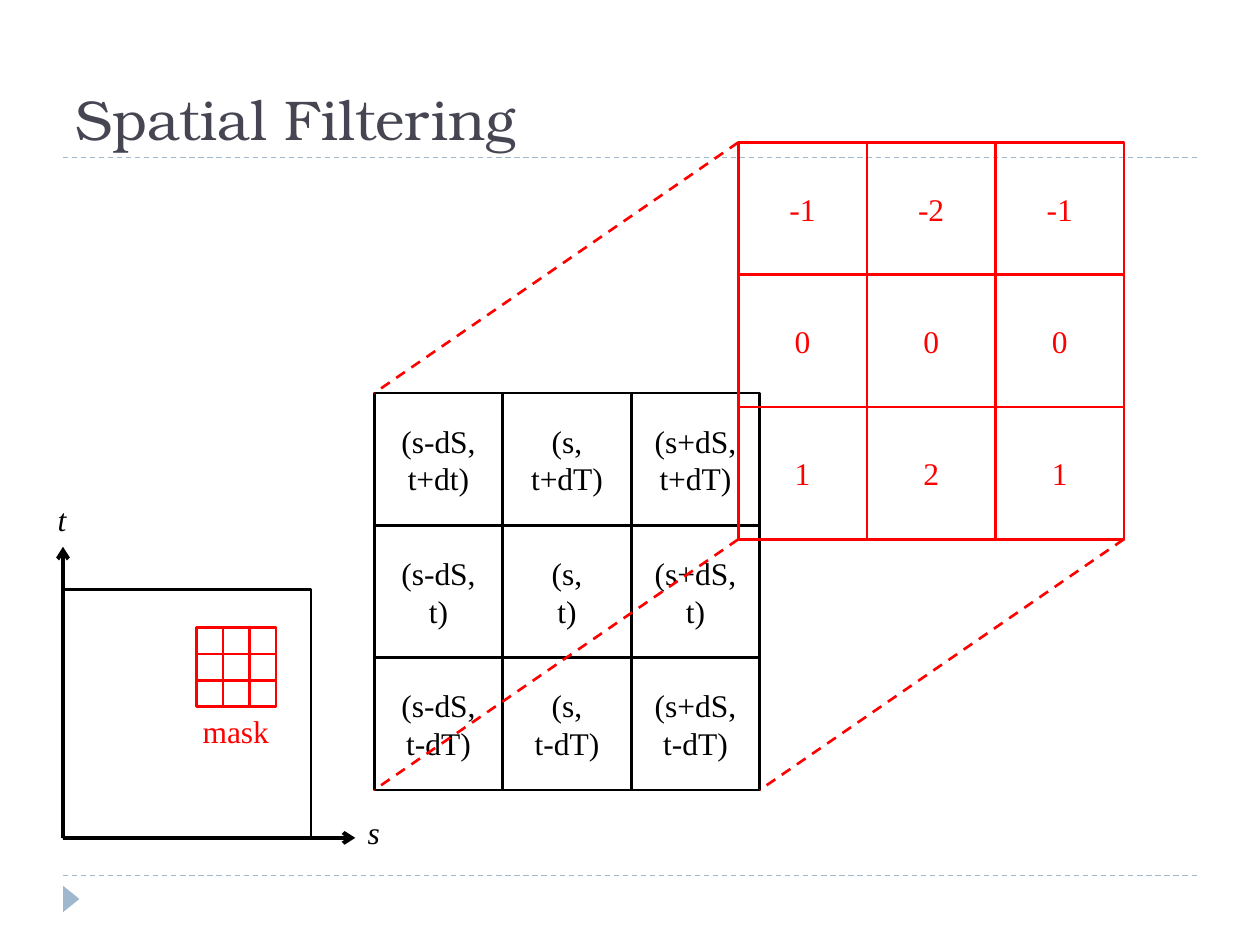
from lxml import etree
from pptx import Presentation
from pptx.dml.color import RGBColor
from pptx.enum.dml import MSO_LINE_DASH_STYLE as Dash
from pptx.enum.shapes import MSO_CONNECTOR as Connector, MSO_SHAPE as Shape
from pptx.enum.text import MSO_ANCHOR as Anchor, PP_ALIGN as Align
from pptx.oxml.ns import qn
from pptx.util import Inches, Pt

COLORS = {"black": "000000", "red": "FF0000", "title": "464653", "accent": "9FB8CD"}
BODY_FONT = "Times New Roman"
TITLE_FONT = "TeX Gyre Bonum"

CELL_WIDTH, CELL_HEIGHT = 1.02, 1.05
NEIGHBOURS = [
    ["(s-dS,\nt+dt)", "(s,\nt+dT)", "(s+dS,\nt+dT)"],
    ["(s-dS,\nt)", "(s,\nt)", "(s+dS,\nt)"],
    ["(s-dS,\nt-dT)", "(s,\nt-dT)", "(s+dS,\nt-dT)"],
]
WEIGHTS = [["-1", "-2", "-1"], ["0", "0", "0"], ["1", "2", "1"]]
EMPTY_MASK = [[""] * 3] * 3


def rgb(name):
    return RGBColor.from_string(COLORS[name])


def write(shape, text, color, size=18, font=BODY_FONT, italic=False, align=Align.LEFT):
    shape.text_frame.text = text
    for para in shape.text_frame.paragraphs:
        para.alignment = align
        para.font.name = font
        para.font.size = Pt(size)
        para.font.italic = italic
        para.font.color.rgb = rgb(color)


def add_label(page, left, top, width, height, text, color, **style):
    box = page.shapes.add_textbox(*map(Inches, (left, top, width, height)))
    box.text_frame.word_wrap = False
    write(box, text, color, **style)
    return box


def add_rect(page, left, top, width, height, color):
    rect = page.shapes.add_shape(Shape.RECTANGLE, *map(Inches, (left, top, width, height)))
    rect.shadow.inherit = False
    rect.fill.background()
    rect.line.color.rgb = rgb(color)
    rect.line.width = Pt(1.5)
    return rect


def add_line(page, start, end, color, width, dashed=False, arrow=False):
    line = page.shapes.add_connector(Connector.STRAIGHT, *map(Inches, (*start, *end)))
    line.line.color.rgb = rgb(color)
    line.line.width = Pt(width)
    if dashed:
        line.line.dash_style = Dash.DASH
    if arrow:
        etree.SubElement(line.line._get_or_add_ln(), qn("a:tailEnd"), type="arrow")
    etree.SubElement(line._element.spPr, qn("a:effectLst"))


def add_grid(page, left, top, cell_width, cell_height, texts, color):
    for row, row_texts in enumerate(texts):
        for col, text in enumerate(row_texts):
            cell = add_rect(page, left + col * cell_width, top + row * cell_height,
                            cell_width, cell_height, color)
            if text:
                cell.text_frame.word_wrap = True
                cell.text_frame.vertical_anchor = Anchor.MIDDLE
                write(cell, text, color, align=Align.CENTER)


def add_frame(page, left, top, width, height):
    # Rules under the title and above the footer
    for y in (top + height, top + 6.7):
        add_line(page, (left, y), (left + width, y), "accent", 0.75, dashed=True)
    # Footer marker
    marker = page.shapes.add_shape(Shape.ISOSCELES_TRIANGLE, Inches(left - 0.04),
                                   Inches(top + 6.82), Inches(0.21), Inches(0.13))
    marker.rotation = 90
    marker.shadow.inherit = False
    marker.fill.solid()
    marker.fill.fore_color.rgb = rgb("accent")
    marker.line.fill.background()
    # Title
    title = add_label(page, left, top, width, height, "Spatial Filtering", "title",
                      size=32, font=TITLE_FONT)
    title.text_frame.word_wrap = True
    title.text_frame.vertical_anchor = Anchor.BOTTOM


def add_image_plane(page, left, top, side):
    # Axes
    origin = (left, top + side)
    add_line(page, origin, (left + 2.32, top + side), "black", 2.25, arrow=True)
    add_line(page, origin, (left, top - 0.34), "black", 2.25, arrow=True)
    add_label(page, left + 2.32, top + 1.72, 0.3, 0.4, "s", "black", italic=True)
    add_label(page, left - 0.14, top - 0.76, 0.27, 0.4, "t", "black", italic=True)
    # Image area with the small mask
    add_rect(page, left, top, side, side, "black")
    add_grid(page, left + 1.06, top + 0.3, 0.21, 0.21, EMPTY_MASK, "red")
    add_label(page, left + 1.01, top + 0.92, 0.73, 0.4, "mask", "red")


def add_mask_detail(page, left, top, shift_x, shift_y):
    width, height = 3 * CELL_WIDTH, 3 * CELL_HEIGHT
    # Pixel neighbourhood, with the mask weights raised above it
    add_grid(page, left, top, CELL_WIDTH, CELL_HEIGHT, NEIGHBOURS, "black")
    add_grid(page, left + shift_x, top + shift_y, CELL_WIDTH, CELL_HEIGHT, WEIGHTS, "red")
    # Lines joining matching corners
    for dx, dy in ((width, height), (0, height), (0, 0)):
        x, y = left + dx, top + dy
        add_line(page, (x + shift_x, y + shift_y), (x, y), "red", 1.5, dashed=True)


def main():
    deck = Presentation()
    deck.slide_width, deck.slide_height = Inches(10), Inches(7.5)
    page = deck.slides.add_slide(deck.slide_layouts[6])
    add_frame(page, 0.5, 0.25, 9, 1)
    add_image_plane(page, 0.5, 4.68, 1.97)
    add_mask_detail(page, 2.97, 3.12, 2.89, -1.99)
    deck.save("out.pptx")


if __name__ == "__main__":
    main()
